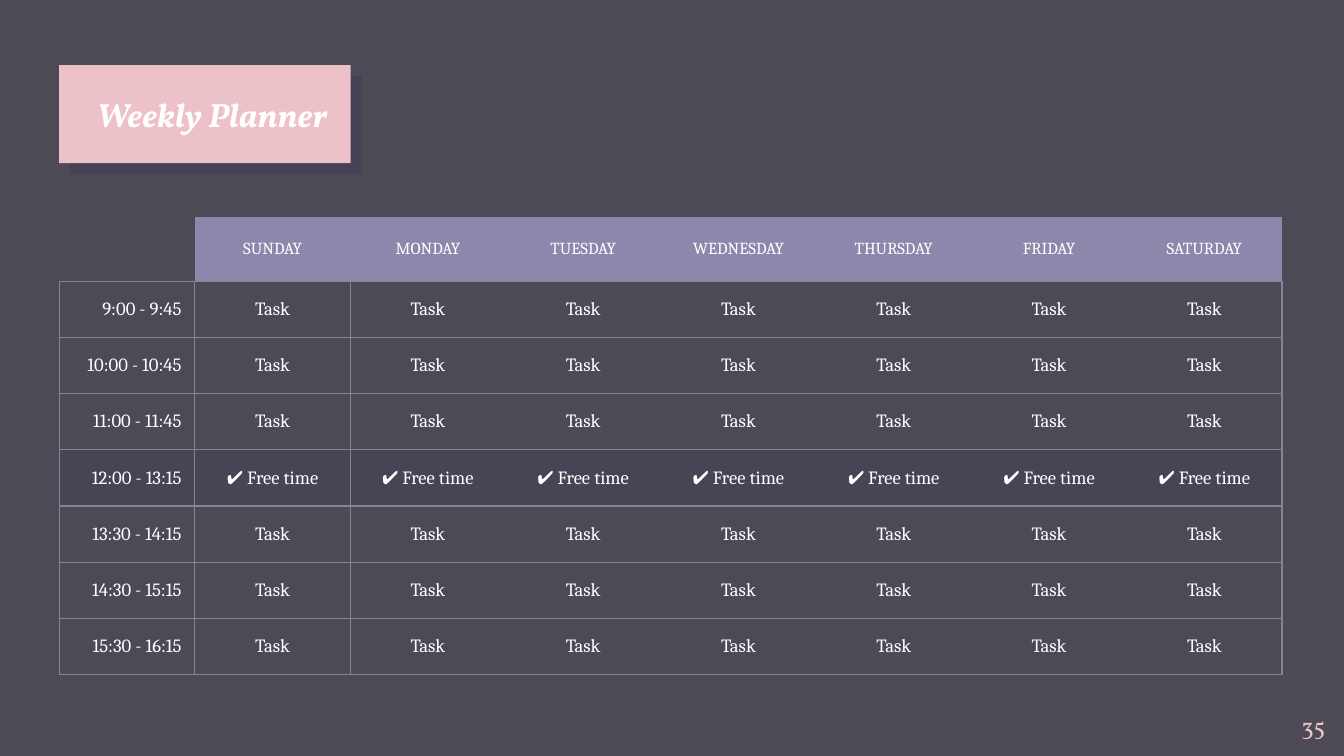
from lxml import etree
from pptx import Presentation
from pptx.dml.color import RGBColor
from pptx.enum import shapes, text
from pptx.oxml import ns
from pptx.util import Inches, Pt

WIDTH, HEIGHT = Inches(10), Inches(5.625)
COLORS = {"back": "4D4A56", "pink": "ECC1C8", "white": "FFFFFF", "head": "8F86AC",
          "line": "888394", "free": "1B1B46", "shade": "20124D"}
DAYS = ["SUNDAY", "MONDAY", "TUESDAY", "WEDNESDAY", "THURSDAY", "FRIDAY", "SATURDAY"]
TIMES = ["9:00 - 9:45", "10:00 - 10:45", "11:00 - 11:45", "12:00 - 13:15",
         "13:30 - 14:15", "14:30 - 15:15", "15:30 - 16:15"]
BREAK = "12:00 - 13:15"
PLAIN = "{2D5ABB26-0587-4C30-8999-92F81FD0307C}"
SIDES = ("left", "right", "top", "bottom")
ALIGN = text.PP_ALIGN


def rgb(name):
    return RGBColor.from_string(COLORS[name])


def add_node(parent, tag, **attrs):
    node = etree.SubElement(parent, ns.qn(tag))
    for key, value in attrs.items():
        node.set(key, str(value))
    return node


def paint(fill, name):
    fill.solid()
    fill.fore_color.rgb = rgb(name)


def write(frame, words, align, color, **style):
    par = frame.paragraphs[0]
    par.alignment = align
    run = par.add_run()
    run.text = words
    run.font.color.rgb = rgb(color)
    for key, value in style.items():
        setattr(run.font, key, value)


def add_box(slide, box, inset, anchor):
    frame = slide.shapes.add_textbox(*box).text_frame
    frame.word_wrap = True
    frame.vertical_anchor = anchor
    for side in SIDES:
        setattr(frame, "margin_" + side, inset)
    return frame


def add_title(slide, box, words):
    left, top, width, height = box
    card = slide.shapes.add_shape(shapes.MSO_SHAPE.RECTANGLE, *box)
    paint(card.fill, "pink")
    card.line.fill.background()
    card.shadow.inherit = False
    effects = card._element.spPr.find(ns.qn("a:effectLst"))
    cast = add_node(effects, "a:outerShdw", dist=Pt(8.2), dir=45 * 60000,
                    algn="bl", rotWithShape=0)
    shade = add_node(cast, "a:srgbClr", val=COLORS["shade"])
    add_node(shade, "a:alpha", val=15000)
    frame = add_box(slide, (left, top, int(width * 0.92), height), 0,
                    text.MSO_ANCHOR.MIDDLE)
    write(frame, words, ALIGN.RIGHT, "white", name="Vollkorn", size=Pt(18),
          bold=True, italic=True)


def add_edges(cell, edges):
    """Draw the lines named by letters, such as "LTB", ahead of the cell's fill."""
    props = cell._tc.get_or_add_tcPr()
    for spot, edge in enumerate(edge for edge in "LRTB" if edge in edges):
        line = etree.Element(ns.qn("a:ln" + edge), w=str(Pt(0.75)))
        add_node(add_node(line, "a:solidFill"), "a:srgbClr", val=COLORS["line"])
        props.insert(spot, line)


def set_cell(cell, words, align, size):
    cell.vertical_anchor = text.MSO_ANCHOR.MIDDLE
    for side in SIDES:
        setattr(cell, "margin_" + side, Inches(0.1))
    write(cell.text_frame, words, align, "white", name="Cambria", size=Pt(size))


def add_planner(slide, box):
    width, height = box[2:]
    count = len(DAYS) + 1
    table = slide.shapes.add_table(len(TIMES) + 1, count, *box).table
    table.first_row = table.horz_banding = False
    table._tbl.tblPr.find(ns.qn("a:tableStyleId")).text = PLAIN

    first, head = int(width * 0.111), int(height * 0.14)
    for col, track in enumerate(table.columns):
        track.width = (width - first) // len(DAYS) if col else first
    for row, track in enumerate(table.rows):
        track.height = (height - head) // len(TIMES) if row else head

    table.cell(0, 0).fill.background()
    add_edges(table.cell(0, 0), "B")
    for col, day in enumerate(DAYS, 1):
        cell = table.cell(0, col)
        set_cell(cell, day, ALIGN.CENTER, 9)
        paint(cell.fill, "head")
        add_edges(cell, "B")

    for row, time in enumerate(TIMES, 1):
        free = time == BREAK
        for col in range(count):
            cell = table.cell(row, col)
            task = "✔ Free time" if free else "Task"
            set_cell(cell, task if col else time,
                     ALIGN.CENTER if col else ALIGN.RIGHT, 10)
            if free:
                paint(cell.fill, "free")
                tint = cell._tc.tcPr.find(".//" + ns.qn("a:srgbClr"))
                add_node(tint, "a:alpha", val=10000)
            else:
                cell.fill.background()
            add_edges(cell, {0: "LRTB", 1: "LTB", count - 1: "RTB"}.get(col, "TB"))


def add_page(slide, box, number):
    frame = add_box(slide, box, Inches(0.1), text.MSO_ANCHOR.TOP)
    write(frame, number, ALIGN.RIGHT, "pink", name="Vollkorn", size=Pt(13))


def share(left, top, width, height):
    """Turn shares of the slide's size into a box."""
    return (int(WIDTH * left), int(HEIGHT * top),
            int(WIDTH * width), int(HEIGHT * height))


def main():
    deck = Presentation()
    deck.slide_width, deck.slide_height = WIDTH, HEIGHT
    slide = deck.slides.add_slide(deck.slide_layouts[6])
    paint(slide.background.fill, "back")
    left = 0.044
    add_title(slide, share(left, 0.086, 0.217, 0.13), "Weekly Planner")
    add_page(slide, share(0.936, 0.923, 0.06, 0.077), "35")
    add_planner(slide, share(left, 0.287, 0.91, 0.606))
    deck.save("out.pptx")


if __name__ == "__main__":
    main()
